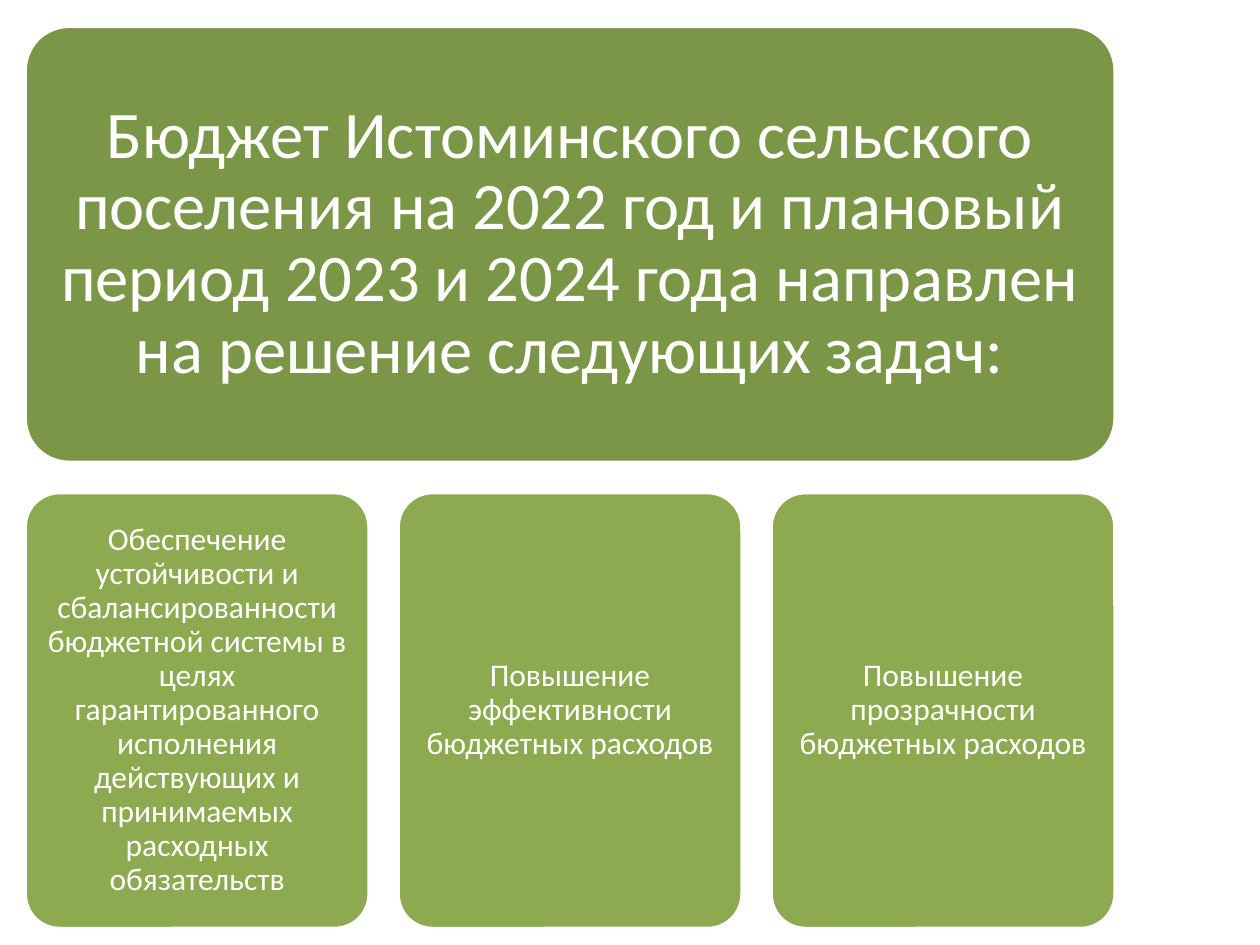
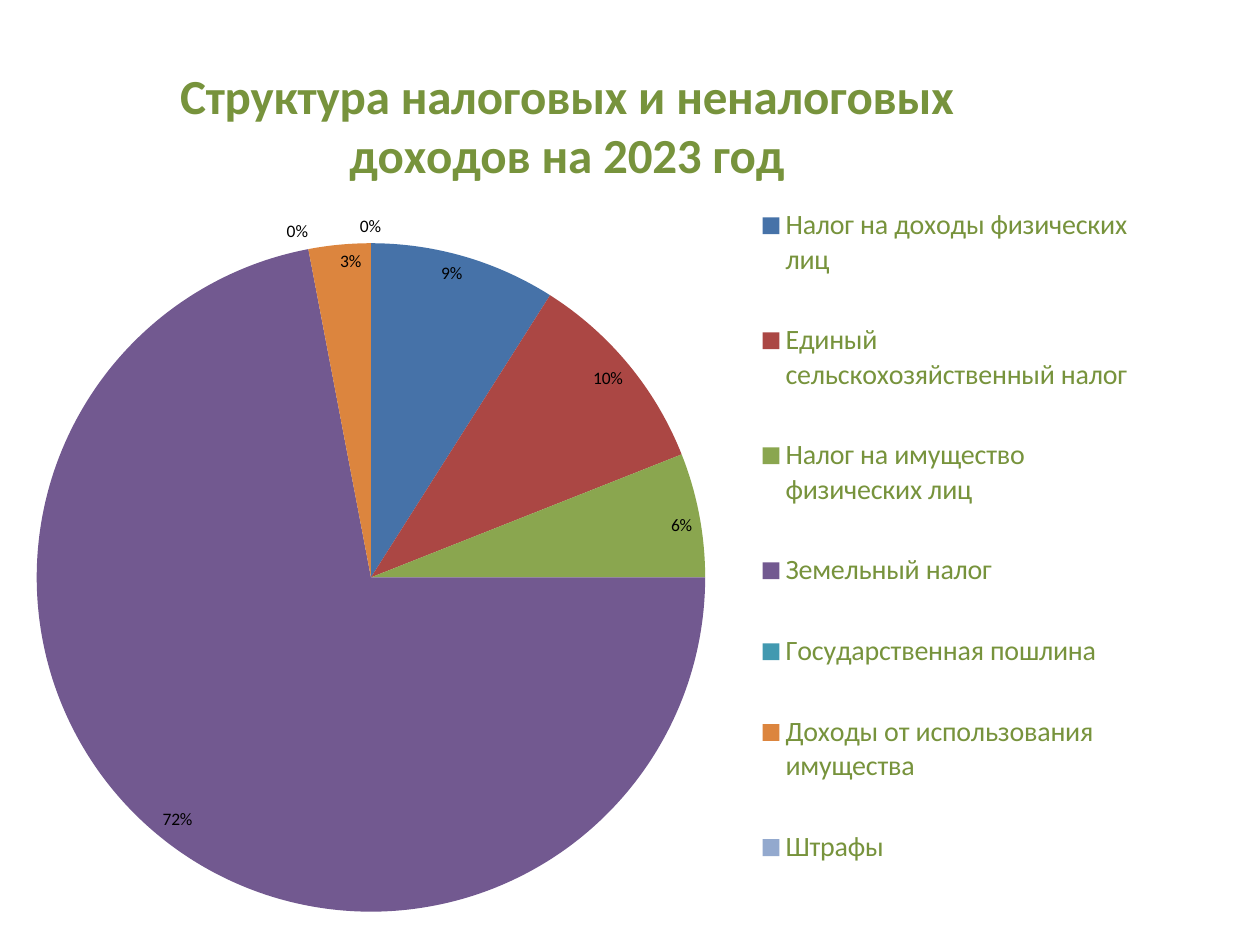
from dataclasses import dataclass

from lxml import etree
from pptx import Presentation
from pptx.chart.data import CategoryChartData
from pptx.dml.color import RGBColor
from pptx.enum.chart import XL_CHART_TYPE, XL_LABEL_POSITION, XL_LEGEND_POSITION
from pptx.enum.shapes import MSO_SHAPE
from pptx.enum.text import MSO_ANCHOR, PP_ALIGN
from pptx.oxml.ns import qn
from pptx.util import Inches, Pt


@dataclass(frozen=True)
class Theme:
    font: str = "Calibri"
    white: str = "FFFFFF"
    black: str = "000000"
    banner: str = "7C9647"
    card: str = "8DAA51"
    heading: str = "77933C"
    slices: tuple = ("4672A8", "AB4744", "8AA64F", "725990", "4299B0", "DC853E", "93A9CE")
    banner_size: int = 38
    card_size: int = 18
    title_size: int = 28
    legend_size: int = 16
    label_size: int = 10


theme = Theme()


def write_text(frame, text, *, size, color, bold=False, line_spacing=None):
    """Put one centred paragraph into a text frame."""
    paragraph = frame.paragraphs[0]
    paragraph.alignment = PP_ALIGN.CENTER
    paragraph.line_spacing = line_spacing
    run = paragraph.add_run()
    run.text = text
    run.font.name = theme.font
    run.font.size = Pt(size)
    run.font.bold = bold
    run.font.color.rgb = RGBColor.from_string(color)


def place_chart_part(element, index, **fractions):
    """Give a chart part a manual layout, in fractions of the chart."""
    for layout in element.findall(qn("c:layout")):
        element.remove(layout)
    layout = etree.Element(qn("c:layout"))
    manual = etree.SubElement(layout, qn("c:manualLayout"))
    if element.tag == qn("c:plotArea"):
        etree.SubElement(manual, qn("c:layoutTarget")).set("val", "inner")
    for mode in ("xMode", "yMode"):
        etree.SubElement(manual, qn(f"c:{mode}")).set("val", "edge")
    for name, value in fractions.items():
        etree.SubElement(manual, qn(f"c:{name}")).set("val", str(value))
    element.insert(index, layout)


presentation = Presentation()
presentation.slide_width = Inches(10)
presentation.slide_height = Inches(7.5)
blank_layout = presentation.slide_layouts[6]

# Slide 1: banner over a row of three goals
slide = presentation.slides.add_slide(blank_layout)
left, top, card_width, box_height = 0.2, 0.21, 2.73, 3.46
column_step, row_step = 2.96, 3.7
goals = [
    "Обеспечение устойчивости и сбалансированности бюджетной системы в целях "
    "гарантированного исполнения действующих и принимаемых расходных обязательств",
    "Повышение эффективности бюджетных расходов",
    "Повышение прозрачности бюджетных расходов",
]
boxes = [(
    "Бюджет Истоминского сельского поселения на 2022 год и плановый период "
    "2023 и 2024 года направлен на решение следующих задач:",
    left, top, 2 * column_step + card_width, theme.banner, theme.banner_size, 0.16,
)]
for column, goal in enumerate(goals):
    boxes.append((goal, left + column * column_step, top + row_step, card_width,
                  theme.card, theme.card_size, 0.07))

for text, box_left, box_top, width, fill, size, inset in boxes:
    shape = slide.shapes.add_shape(
        MSO_SHAPE.ROUNDED_RECTANGLE,
        Inches(box_left), Inches(box_top), Inches(width), Inches(box_height))
    shape.adjustments[0] = 0.1
    shape.shadow.inherit = False
    shape.fill.solid()
    shape.fill.fore_color.rgb = RGBColor.from_string(fill)
    shape.line.color.rgb = RGBColor.from_string(theme.white)
    shape.line.width = Pt(2)
    frame = shape.text_frame
    frame.word_wrap = True
    frame.vertical_anchor = MSO_ANCHOR.MIDDLE
    frame.margin_left = frame.margin_right = Inches(inset)
    frame.margin_top = frame.margin_bottom = Inches(inset)
    write_text(frame, text, size=size, color=theme.white, line_spacing=0.9)

# Slide 2: pie of revenue shares
slide = presentation.slides.add_slide(blank_layout)
chart_title = "Структура налоговых и неналоговых доходов на 2023 год"
revenue_shares = {
    "Налог на доходы физических лиц": 9,
    "Единый сельскохозяйственный налог": 10,
    "Налог на имущество физических лиц": 6,
    "Земельный налог": 72,
    "Государственная пошлина": 0,
    "Доходы от использования имущества": 3,
    "Штрафы": 0,
}
chart_data = CategoryChartData(number_format="0.0")
chart_data.categories = list(revenue_shares)
chart_data.add_series(chart_title, list(revenue_shares.values()))
chart = slide.shapes.add_chart(
    XL_CHART_TYPE.PIE, Inches(0), Inches(0.21), Inches(9.06), Inches(7.17), chart_data).chart
chart.font.name = theme.font
chart.font.size = Pt(theme.label_size)
chart.font.color.rgb = RGBColor.from_string(theme.black)

# Chart title and legend
chart.has_title = True
write_text(chart.chart_title.text_frame, chart_title,
           size=theme.title_size, color=theme.heading, bold=True)
chart.has_legend = True
legend = chart.legend
legend.position = XL_LEGEND_POSITION.RIGHT
legend.include_in_layout = False
legend.font.name = theme.font
legend.font.size = Pt(theme.legend_size)
legend.font.color.rgb = RGBColor.from_string(theme.heading)

# Slices and percent labels; the number format leaves out zero shares
plot = chart.plots[0]
plot.vary_by_categories = True
series = plot.series[0]
labels = series.data_labels
labels.show_percentage = True
labels.show_value = False
labels.number_format = "0%;;"
labels.number_format_is_linked = False
labels.position = XL_LABEL_POSITION.INSIDE_END
for index, color in enumerate(theme.slices):
    fill = series.points[index].format.fill
    fill.solid()
    fill.fore_color.rgb = RGBColor.from_string(color)

# Labels of the zero shares, outside the rim
label_width, label_height = 0.5, 0.2
for center_x, center_y in ((2.36, 1.83), (2.94, 1.79)):
    text_box = slide.shapes.add_textbox(
        Inches(center_x - label_width / 2), Inches(center_y - label_height / 2),
        Inches(label_width), Inches(label_height))
    frame = text_box.text_frame
    frame.word_wrap = True
    frame.vertical_anchor = MSO_ANCHOR.MIDDLE
    frame.margin_left = frame.margin_right = frame.margin_top = frame.margin_bottom = 0
    write_text(frame, "0%", size=theme.label_size, color=theme.black)

# Places of the chart parts
chart_space = chart.element
place_chart_part(next(chart_space.iter(qn("c:title"))), 1, x=0.15, y=0.03)
place_chart_part(next(chart_space.iter(qn("c:plotArea"))), 0, x=0.03, y=0.24, w=0.59, h=0.74)
place_chart_part(next(chart_space.iter(qn("c:legend"))), 1, x=0.67, y=0.15, w=0.33, h=0.83)

presentation.save("out.pptx")
